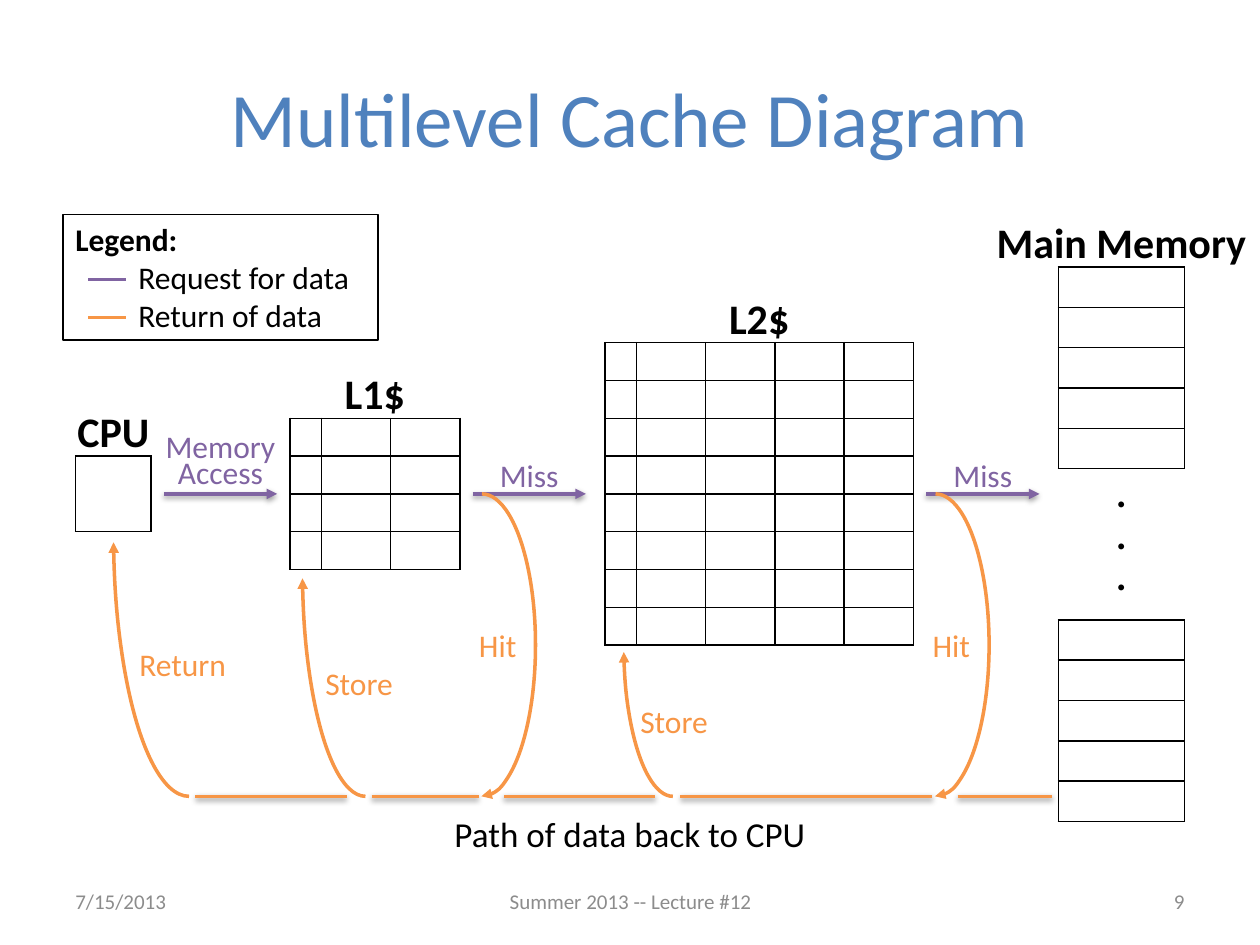
from lxml import etree
from pptx import Presentation
from pptx.dml.color import RGBColor
from pptx.enum.shapes import MSO_CONNECTOR, MSO_SHAPE
from pptx.enum.text import MSO_ANCHOR, PP_ALIGN
from pptx.oxml.ns import qn
from pptx.util import Pt

LEFT, CENTER, RIGHT = PP_ALIGN.LEFT, PP_ALIGN.CENTER, PP_ALIGN.RIGHT
TOP, MIDDLE = MSO_ANCHOR.TOP, MSO_ANCHOR.MIDDLE
STRAIGHT = MSO_CONNECTOR.STRAIGHT
ARC, RECTANGLE = MSO_SHAPE.ARC, MSO_SHAPE.RECTANGLE

BLACK = RGBColor(0x00, 0x00, 0x00)
BLUE = RGBColor(0x4F, 0x81, 0xBD)
GRAY = RGBColor(0x8C, 0x8C, 0x8C)
PURPLE = RGBColor(0x80, 0x64, 0xA2)
ORANGE = RGBColor(0xF7, 0x96, 0x46)

EMU_PER_PX = 9144  # 100 px to the inch
FONT = "Calibri"


def px(*lengths):
    return [length * EMU_PER_PX for length in lengths]


def add_xml(parent, tag, **attributes):
    return etree.SubElement(parent, qn(tag), attributes)


class Diagram:
    def __init__(self, slide):
        self.slide = slide
        self.shapes = slide.shapes

    def fill_frame(self, frame, lines, size, color, align=CENTER, bold=False,
                   spacing=None):
        frame.word_wrap = True
        frame.text = "\n".join(lines)
        for paragraph in frame.paragraphs:
            paragraph.alignment = align
            paragraph.line_spacing = spacing
            font = paragraph.font
            font.name, font.size, font.bold = FONT, Pt(size), bold
            font.color.rgb = color

    def text(self, box, *lines, size=18, color=BLACK, align=CENTER,
             bold=False, spacing=None, anchor=TOP, inset=(0, 5)):
        frame = self.shapes.add_textbox(*px(*box)).text_frame
        frame.margin_left = frame.margin_right = inset[0] * EMU_PER_PX
        frame.margin_top = frame.margin_bottom = inset[1] * EMU_PER_PX
        frame.vertical_anchor = anchor
        self.fill_frame(frame, lines, size, color, align, bold, spacing)

    def grid(self, left, top, columns, row_height, row_count):
        table = self.shapes.add_table(
            row_count, len(columns),
            *px(left, top, sum(columns), row_height * row_count)).table
        table.first_row = table.horz_banding = False
        for column, width in zip(table.columns, columns):
            column.width = width * EMU_PER_PX
        for row in table.rows:
            row.height = row_height * EMU_PER_PX
            for cell in row.cells:
                self.empty_cell(cell)

    def empty_cell(self, cell):
        cell.margin_top = cell.margin_bottom = 0
        add_xml(cell.text_frame.paragraphs[0]._p, "a:endParaRPr", sz="1200")
        properties = cell._tc.get_or_add_tcPr()
        for side in ("a:lnL", "a:lnR", "a:lnT", "a:lnB"):
            border = add_xml(properties, side, w=str(Pt(1)))
            fill = add_xml(border, "a:solidFill")
            add_xml(fill, "a:srgbClr", val=str(BLACK))
        cell.fill.background()

    def stroke(self, shape, color, arrow):
        shape.line.color.rgb = color
        shape.line.width = Pt(2)
        if arrow:
            add_xml(shape.line._get_or_add_ln(), "a:tailEnd", type="triangle")

    def line(self, x1, x2, y, color, arrow=False, shadow=True):
        connector = self.shapes.add_connector(STRAIGHT, *px(x1, y, x2, y))
        self.stroke(connector, color, arrow)
        effects = add_xml(connector._element.spPr, "a:effectLst")
        if shadow:
            outer = add_xml(effects, "a:outerShdw", blurRad=str(Pt(3.1)),
                            dist=str(Pt(1.6)), dir="5400000", rotWithShape="0")
            tone = add_xml(outer, "a:srgbClr", val=str(BLACK))
            add_xml(tone, "a:alpha", val="38000")

    def arc(self, box, end_angle, rotation=0):
        curve = self.shapes.add_shape(ARC, *px(*box))
        curve.shadow.inherit = False
        curve.fill.background()
        # Angles are stored in units of 100000/60000 of a degree
        curve.adjustments[0] = 270 * 0.6
        curve.adjustments[1] = end_angle * 0.6
        curve.rotation = rotation
        self.stroke(curve, ORANGE, arrow=True)

    def legend(self, box, title, entries):
        panel = self.shapes.add_shape(RECTANGLE, *px(*box))
        panel.shadow.inherit = False
        panel.fill.background()
        panel.line.color.rgb = BLACK
        panel.line.width = Pt(0.75)
        frame = panel.text_frame
        frame.vertical_anchor = MIDDLE
        lines = [title] + ["\t" + label for label, _ in entries]
        self.fill_frame(frame, lines, 18, BLACK, LEFT)
        frame.paragraphs[0].font.bold = True
        for index, (_, color) in enumerate(entries):
            properties = frame.paragraphs[index + 1]._p.get_or_add_pPr()
            tabs = etree.Element(qn("a:tabLst"))
            add_xml(tabs, "a:tab", pos=str(50 * EMU_PER_PX), algn="l")
            properties.find(qn("a:defRPr")).addprevious(tabs)
            self.line(box[0] + 20, box[0] + 50, box[1] + 52 + 30 * index,
                      color, shadow=False)


def main():
    presentation = Presentation()
    presentation.slide_width, presentation.slide_height = px(1000, 750)
    diagram = Diagram(
        presentation.slides.add_slide(presentation.slide_layouts[6]))

    # Title and footer
    diagram.text((50, 30, 900, 125), "Multilevel Cache Diagram", size=44,
                 color=BLUE, anchor=MIDDLE)
    for left, width, note, align in (
            (50, 233, "7/15/2013", LEFT),
            (342, 317, "Summer 2013 -- Lecture #12", CENTER),
            (717, 233, "9", RIGHT)):
        diagram.text((left, 695, width, 40), note, size=12, color=GRAY,
                     align=align, anchor=MIDDLE, inset=(10, 5))

    # Memory levels: CPU, two caches, both ends of main memory
    diagram.grid(60, 362, [60], 60, 1)
    diagram.grid(230, 332, [25] + [55] * 2, 30, 4)
    diagram.grid(480, 272, [25] + [55] * 4, 30, 8)
    for top in (212, 492):
        diagram.grid(840, top, [100], 32, 5)
    for left, top, width, name in (
            (60, 317, 60, "CPU"), (230, 287, 135, "L1$"),
            (480, 227, 245, "L2$"), (780, 167, 220, "Main Memory")):
        diagram.text((left, top, width, 50), name, size=24, bold=True)
    diagram.text((880, 372, 20, 111), ".", ".", ".", size=28, spacing=0.7)

    # Requests going down the hierarchy
    for left in (130, 375, 735):
        diagram.line(left, left + 90, 392, PURPLE, arrow=True)
    diagram.text((130, 347, 90, 54), "Memory", "Access", color=PURPLE,
                 spacing=0.7, inset=(0, 0))

    # Misses and hits at each cache
    for left in (340, 700):
        diagram.text((left + 35, 357, 90, 40), "Miss", color=PURPLE)
        diagram.arc((left, 392, 85, 240), 90.21)
        diagram.text((left + 30, 492, 50, 40), "Hit", color=ORANGE)

    # Data returning to the CPU and stored on the way
    for start, end in ((155, 275), (295, 380), (400, 520), (540, 740),
                       (760, 835)):
        diagram.line(start, end, 632, ORANGE)
    for curve, label, step in (
            ((90, 212, 120, 420), (105, 507, 80, 40), "Return"),
            ((240, 272, 100, 360), (250, 522, 70, 40), "Store"),
            ((495, 392, 78, 240), (500, 552, 70, 40), "Store")):
        diagram.arc(curve, 352.03, rotation=180)
        diagram.text(label, step, color=ORANGE)
    diagram.text((0, 640, 1000, 44), "Path of data back to CPU", size=20)

    # Legend
    diagram.legend((50, 170, 250, 100), "Legend:",
                   [("Request for data", PURPLE), ("Return of data", ORANGE)])

    presentation.save("out.pptx")


if __name__ == "__main__":
    main()
